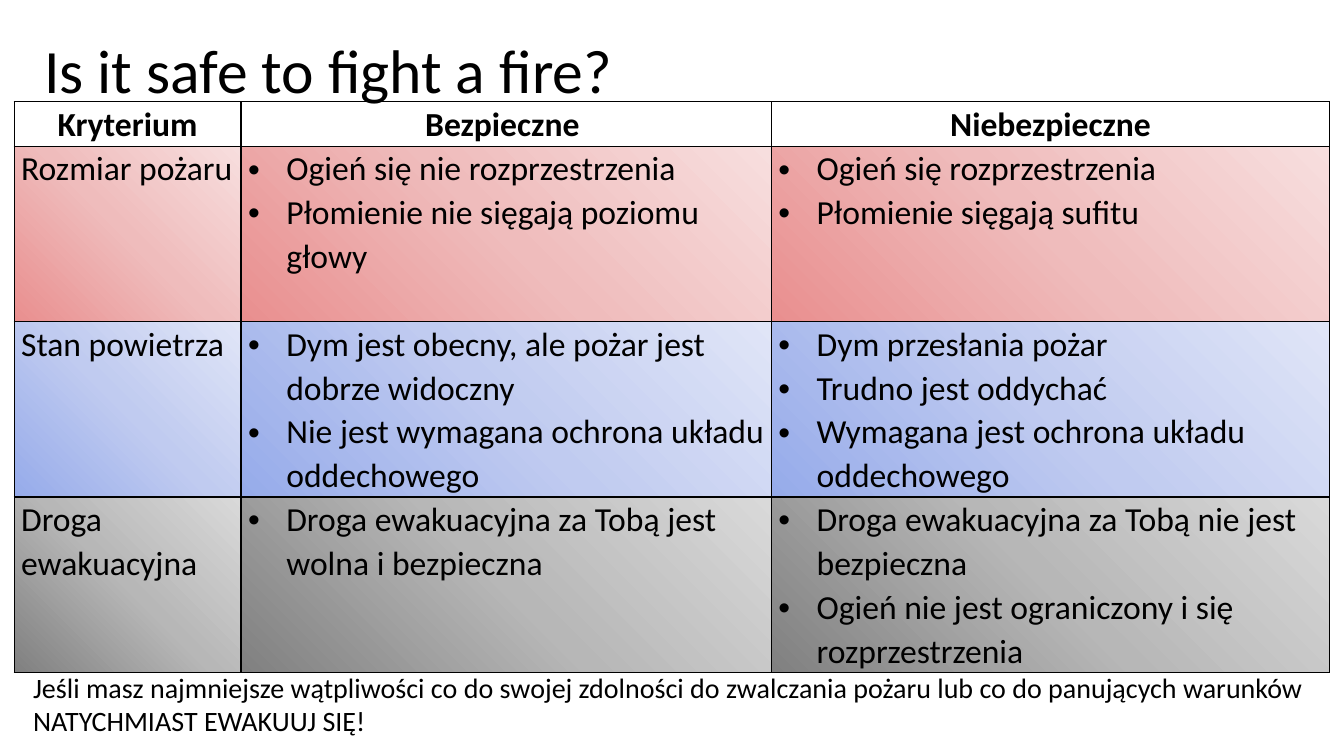
from lxml import etree
from pptx import Presentation
from pptx.dml.color import RGBColor
from pptx.enum import text as t
from pptx.oxml import ns
from pptx.util import Inches, Pt

BLACK = RGBColor(0x00, 0x00, 0x00)
RED = [RGBColor.from_string(c) for c in ("E98F8F", "EFBCBC", "F7DEDE")]
BLUE = [RGBColor.from_string(c) for c in ("96ABEA", "C0CBF0", "E0E5F7")]
GREY = [RGBColor.from_string(c) for c in ("808080", "B7B7B7", "D9D9D9")]

HEADS = ["Kryterium", "Bezpieczne ", "Niebezpieczne"]
ROWS = [
    (None, HEADS),
    (RED, ["Rozmiar pożaru",
           "Ogień się nie rozprzestrzenia\nPłomienie nie sięgają poziomu głowy",
           "Ogień się rozprzestrzenia\nPłomienie sięgają sufitu"]),
    (BLUE, ["Stan powietrza",
            "Dym jest obecny, ale pożar jest dobrze widoczny\n"
            "Nie jest wymagana ochrona układu oddechowego",
            "Dym przesłania pożar\nTrudno jest oddychać\n"
            "Wymagana jest ochrona układu oddechowego"]),
    (GREY, ["Droga ewakuacyjna",
            "Droga ewakuacyjna za Tobą jest wolna i bezpieczna",
            "Droga ewakuacyjna za Tobą nie jest bezpieczna\n"
            "Ogień nie jest ograniczony i się rozprzestrzenia"]),
]
COLS = [2.25, 5.26, 5.54]
HEIGHTS = [0.44, 1.74, 1.74, 1.74]


def style(par, size, bold=False):
    for run in par.runs:
        run.font.name = "Calibri"
        run.font.size = Pt(size)
        run.font.bold = bold
        run.font.color.rgb = BLACK


def add(parent, tag, **attrs):
    return etree.SubElement(parent, ns.qn("a:" + tag), attrs)


deck = Presentation()
deck.slide_width, deck.slide_height = Inches(13.33), Inches(7.5)
slide = deck.slides.add_slide(deck.slide_layouts[5])

# Title
title = slide.shapes.title
title.left, title.top = Inches(0.34), Inches(0)
title.width, title.height = Inches(11.5), Inches(1.45)
title.text_frame.text = "Is it safe to fight a fire?"
title.text_frame.vertical_anchor = t.MSO_ANCHOR.MIDDLE
par = title.text_frame.paragraphs[0]
par.alignment = t.PP_ALIGN.LEFT
par.line_spacing = 0.9
style(par, 44)

# Criteria table
table = slide.shapes.add_table(
    len(ROWS), len(COLS), Inches(0.14), Inches(1.01),
    Inches(sum(COLS)), Inches(sum(HEIGHTS))).table
table.first_row = table.horz_banding = False
for col, width in zip(table.columns, COLS):
    col.width = Inches(width)

for r, (shades, words) in enumerate(ROWS):
    table.rows[r].height = Inches(HEIGHTS[r])
    for c, word in enumerate(words):
        cell = table.cell(r, c)
        cell.margin_left = cell.margin_right = Inches(0.07)
        cell.margin_top = cell.margin_bottom = 0
        cell.text_frame.text = word
        for par in cell.text_frame.paragraphs:
            par.line_spacing = 1.07
            par.alignment = t.PP_ALIGN.LEFT if r else t.PP_ALIGN.CENTER
            style(par, 24, bold=r == 0)
            if r and c:
                props = par._p.get_or_add_pPr()
                props.set("marL", str(Inches(0.38)))
                props.set("indent", str(-Inches(0.38)))
                add(props, "buFont", typeface="Arial")
                add(props, "buChar", char="•")

        # Borders, then fill
        props = cell._tc.get_or_add_tcPr()
        for side in "LRTB":
            line = add(props, "ln" + side, w=str(Pt(1)))
            add(add(line, "solidFill"), "srgbClr", val=str(BLACK))
        if shades is None:
            cell.fill.background()
            continue
        grad = add(props, "gradFill", rotWithShape="1")
        stops = add(grad, "gsLst")
        for i, shade in enumerate(shades):
            stop = add(stops, "gs", pos=str(i * 50000))
            add(stop, "srgbClr", val=str(shade))
        add(grad, "lin", ang=str(315 * 60000), scaled="0")

# Closing advice
note = slide.shapes.add_textbox(
    Inches(0.23), Inches(6.6), Inches(12.87), Inches(0.77)).text_frame
note.word_wrap = True
note.auto_size = t.MSO_AUTO_SIZE.SHAPE_TO_FIT_TEXT
note.text = ("Jeśli masz najmniejsze wątpliwości co do swojej zdolności do "
             "zwalczania pożaru lub co do panujących warunków "
             "NATYCHMIAST EWAKUUJ SIĘ!")
style(note.paragraphs[0], 20)

deck.save("out.pptx")
